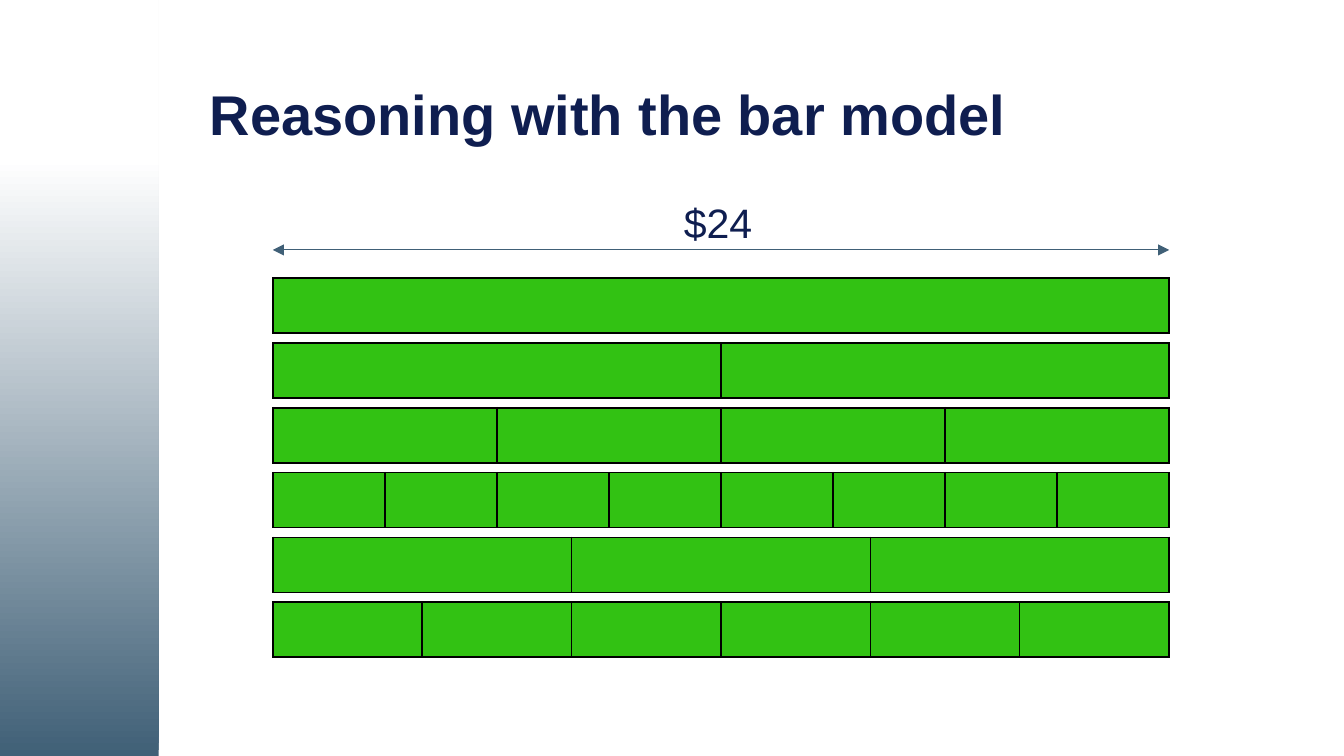
from lxml import etree
from pptx import Presentation
from pptx.dml.color import RGBColor
from pptx.enum.shapes import MSO_CONNECTOR, MSO_SHAPE
from pptx.enum.text import MSO_ANCHOR, PP_ALIGN
from pptx.oxml.ns import qn
from pptx.util import Inches, Pt

STRAIGHT = MSO_CONNECTOR.STRAIGHT
RECTANGLE = MSO_SHAPE.RECTANGLE
MIDDLE = MSO_ANCHOR.MIDDLE
LEFT = PP_ALIGN.LEFT

NAVY = RGBColor(0x0F, 0x1E, 0x50)
SLATE = RGBColor(0x40, 0x60, 0x77)
GREEN = RGBColor(0x32, 0xC2, 0x13)
WHITE = RGBColor(0xFF, 0xFF, 0xFF)
BLACK = RGBColor(0x00, 0x00, 0x00)

FONT = "Arial"
BAR_LEFT = 2.03
BAR_WIDTH = 6.67
BAR_HEIGHT = 0.41
FIRST_BAR_TOP = 2.07
LAST_BAR_TOP = 4.48
BAR_PARTS = (1, 2, 4, 8, 3, 6)


def format_text(paragraph, size, bold=False):
    for run in paragraph.runs:
        run.font.name = FONT
        run.font.size = Pt(size)
        run.font.bold = bold
        run.font.color.rgb = NAVY


def add_sidebar(slide, height):
    sidebar = slide.shapes.add_shape(RECTANGLE, 0, 0, Inches(1.18), height)
    sidebar.shadow.inherit = False
    sidebar.line.fill.background()
    sidebar.fill.gradient()
    sidebar.fill.gradient_angle = 90
    stops = sidebar.fill.gradient_stops
    for stop, color, position in zip(stops, (SLATE, WHITE), (0, 0.79)):
        stop.color.rgb = color
        stop.position = position


def set_title(slide, text):
    title = slide.shapes.title
    title.left, title.top = Inches(1.46), Inches(0.36)
    title.width, title.height = Inches(7.23), Inches(1.03)
    title.text_frame.text = text
    title.text_frame.vertical_anchor = MIDDLE
    paragraph = title.text_frame.paragraphs[0]
    paragraph.alignment = LEFT
    paragraph.line_spacing = 0.9
    format_text(paragraph, 30, bold=True)


def add_total_label(slide, text):
    label = slide.shapes.add_textbox(Inches(4.99), Inches(1.42), Inches(2.67), Inches(0.47))
    label.text_frame.word_wrap = True
    label.text_frame.text = text
    format_text(label.text_frame.paragraphs[0], 22)


def add_total_arrow(slide):
    height = Inches(1.86)
    arrow = slide.shapes.add_connector(
        STRAIGHT, Inches(BAR_LEFT), height, Inches(BAR_LEFT + BAR_WIDTH), height
    )
    arrow.line.color.rgb = SLATE
    arrow.line.width = Pt(0.5)
    line = arrow.line._get_or_add_ln()
    for end in ("a:headEnd", "a:tailEnd"):
        etree.SubElement(line, qn(end), type="triangle")
    etree.SubElement(arrow._element.spPr, qn("a:effectLst"))


def format_cell(cell):
    properties = cell._tc.get_or_add_tcPr()
    for side in ("a:lnL", "a:lnR", "a:lnT", "a:lnB"):
        border = etree.SubElement(properties, qn(side), w=str(Pt(1)))
        fill = etree.SubElement(border, qn("a:solidFill"))
        etree.SubElement(fill, qn("a:srgbClr"), val=str(BLACK))
    cell.fill.solid()
    cell.fill.fore_color.rgb = GREEN
    cell.margin_top = cell.margin_bottom = 0


def add_bar(slide, top, parts):
    frame = slide.shapes.add_table(
        1, parts, Inches(BAR_LEFT), Inches(top), Inches(BAR_WIDTH), Inches(BAR_HEIGHT)
    )
    for column in frame.table.columns:
        column.width = Inches(BAR_WIDTH / parts)
    for cell in frame.table.iter_cells():
        format_cell(cell)


def main():
    presentation = Presentation()
    presentation.slide_width = Inches(10)
    presentation.slide_height = Inches(10 * 9 / 16)
    slide = presentation.slides.add_slide(presentation.slide_layouts[5])

    add_sidebar(slide, presentation.slide_height)
    set_title(slide, "Reasoning with the bar model")
    add_total_label(slide, "$24")
    add_total_arrow(slide)
    pitch = (LAST_BAR_TOP - FIRST_BAR_TOP) / (len(BAR_PARTS) - 1)
    for index, parts in enumerate(BAR_PARTS):
        add_bar(slide, FIRST_BAR_TOP + index * pitch, parts)

    presentation.save("out.pptx")


if __name__ == "__main__":
    main()
